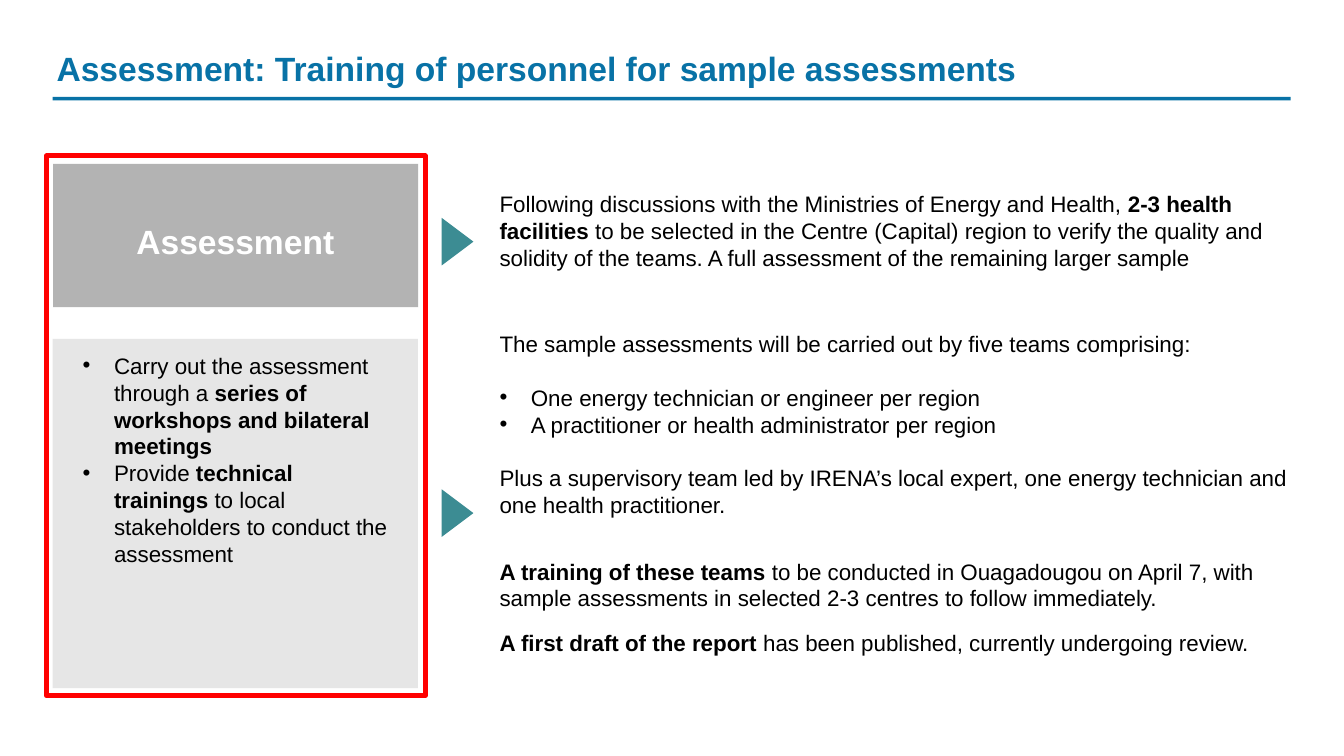
from dataclasses import dataclass

from lxml.etree import SubElement
from pptx import Presentation
from pptx.dml.color import RGBColor
from pptx.enum.shapes import MSO_SHAPE as Kind
from pptx.enum.text import MSO_ANCHOR as Anchor
from pptx.enum.text import MSO_AUTO_SIZE as Auto
from pptx.enum.text import PP_ALIGN as Align
from pptx.oxml.ns import qn
from pptx.util import Cm, Pt

BLUE, TEAL, RED = "0872A6", "3C8C93", "FF0000"
WHITE, BLACK = "FFFFFF", "000000"
HANG = Cm(0.79)


@dataclass
class Area:
    left: float
    top: float
    width: float
    height: float

    def place(self) -> tuple:
        return Cm(self.left), Cm(self.top), Cm(self.width), Cm(self.height)


@dataclass
class Block:
    area: Area
    fill: str = ""
    line: str = ""
    kind: int = Kind.RECTANGLE
    turn: int = 0


@dataclass
class Para:
    text: str
    bullet: bool = False
    gap: float = 0
    size: int = 16
    ink: str = BLACK
    align: int = Align.LEFT


@dataclass
class Note:
    area: Area
    paras: list


def tint(code: str) -> RGBColor:
    return RGBColor.from_string(code)


def draw(slide, block: Block) -> None:
    shape = slide.shapes.add_shape(block.kind, *block.area.place())
    shape.shadow.inherit = False
    shape.rotation = block.turn
    if block.fill:
        shape.fill.solid()
        shape.fill.fore_color.rgb = tint(block.fill)
    else:
        shape.fill.background()
    if block.line:
        shape.line.color.rgb = tint(block.line)
        shape.line.width = Pt(3.5)
    else:
        shape.line.fill.background()


def write(shape, paras: list) -> None:
    frame = shape.text_frame
    frame.word_wrap = True
    frame.auto_size = Auto.NONE
    frame.vertical_anchor = Anchor.TOP
    for i, para in enumerate(paras):
        line = frame.add_paragraph() if i else frame.paragraphs[0]
        line.alignment = para.align
        line.space_before = Pt(para.gap)
        if para.bullet:
            props = line._p.get_or_add_pPr()
            props.set("marL", str(HANG))
            props.set("indent", str(-HANG))
            SubElement(props, qn("a:buFont")).set("typeface", "Arial")
            SubElement(props, qn("a:buChar")).set("char", "•")
        line.font.name = "Arial"
        line.font.size = Pt(para.size)
        line.font.color.rgb = tint(para.ink)
        for j, part in enumerate(para.text.split("*")):
            if part:
                run = line.add_run()
                run.text = part
                run.font.bold = j % 2 == 1


def settle(shape, note: Note) -> None:
    shape.left, shape.top, shape.width, shape.height = note.area.place()
    write(shape, note.paras)
    shape.element.getparent().append(shape.element)


BLOCKS = [
    Block(Area(1.33, 2.44, 31.2, 0.09), BLUE),
    Block(Area(1.17, 3.93, 9.55, 13.6), line=RED),
    *(Block(Area(10.93, top, 1.2, 0.8), TEAL, kind=Kind.ISOSCELES_TRIANGLE, turn=90)
      for top in (5.69, 12.53)),
    Block(Area(1.34, 4.13, 9.2, 3.61), "B3B3B3"),
    Block(Area(1.33, 8.54, 9.2, 8.8), "E6E6E6"),
]

TITLE = Note(Area(1.17, 1.09, 31.52, 1.28), [
    Para("*Assessment: Training of personnel for sample assessments*", size=24, ink=BLUE),
])
TASKS = Note(Area(1.83, 8.74, 8.2, 5.74), [
    Para("Carry out the assessment through a *series of workshops and bilateral meetings*",
         bullet=True),
    Para("Provide *technical trainings* to local stakeholders to conduct the assessment",
         bullet=True),
])
NOTES = [
    Note(Area(1.83, 5.44, 8.2, 1.28), [
        Para("*Assessment*", size=24, ink=WHITE, align=Align.CENTER),
    ]),
    Note(Area(12.34, 4.67, 20.6, 2.31), [
        Para("Following discussions with the Ministries of Energy and Health, "
             "*2-3 health facilities* to be selected in the Centre (Capital) region "
             "to verify the quality and solidity of the teams. A full assessment "
             "of the remaining larger sample"),
    ]),
    Note(Area(12.34, 8.2, 20.6, 5.74), [
        Para("The sample assessments will be carried out by five teams comprising:"),
        Para("One energy technician or engineer per region", bullet=True, gap=19),
        Para("A practitioner or health administrator per region", bullet=True),
        Para("Plus a supervisory team led by IRENA’s local expert, "
             "one energy technician and one health practitioner.", gap=19),
    ]),
    Note(Area(12.34, 13.93, 20.6, 1.63), [
        Para("*A training of these teams* to be conducted in Ouagadougou on April 7, "
             "with sample assessments in selected 2-3 centres to follow immediately."),
    ]),
    Note(Area(12.34, 15.74, 20.6, 0.94), [
        Para("*A first draft of the report *has been published, currently undergoing review."),
    ]),
]


def main() -> None:
    deck = Presentation()
    deck.slide_width, deck.slide_height = Cm(33.87), Cm(19.05)
    slide = deck.slides.add_slide(deck.slide_layouts[1])
    for block in BLOCKS:
        draw(slide, block)
    settle(slide.shapes.title, TITLE)
    settle(slide.placeholders[1], TASKS)
    for note in NOTES:
        write(slide.shapes.add_textbox(*note.area.place()), note.paras)
    deck.save("out.pptx")


if __name__ == "__main__":
    main()
